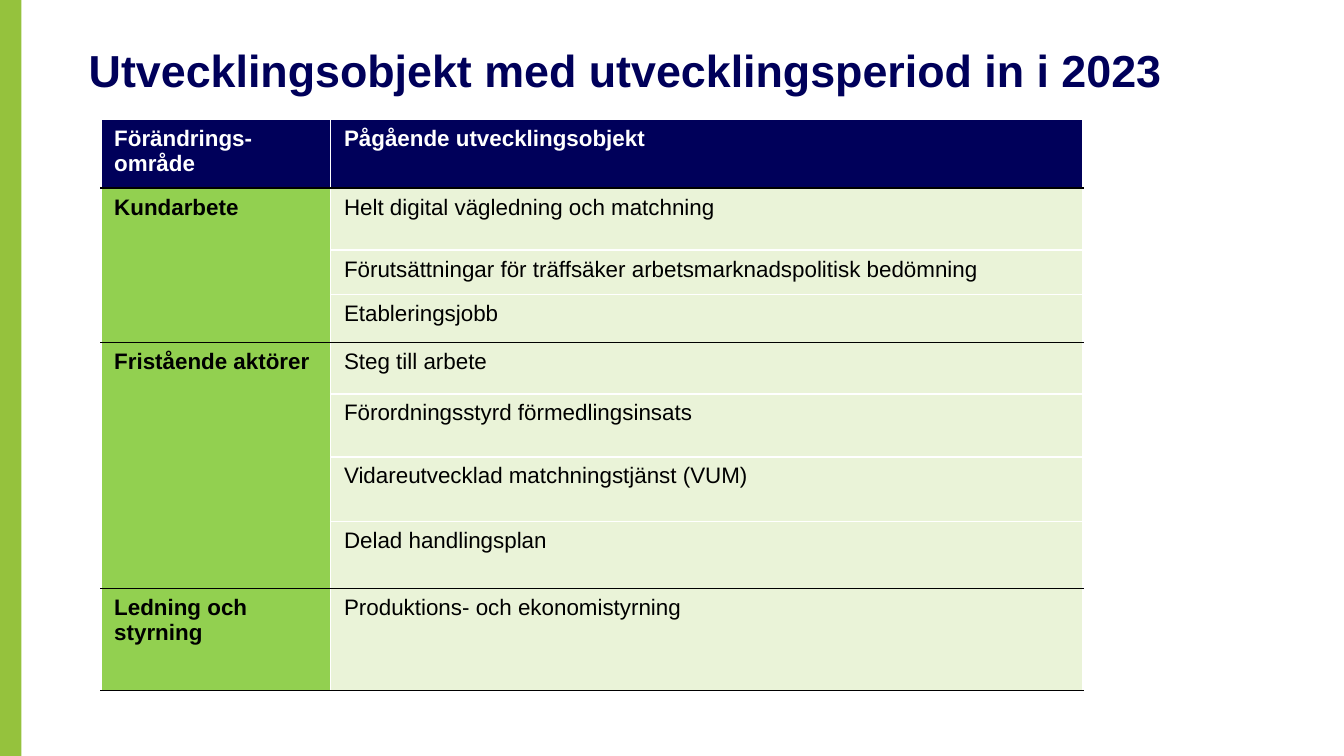
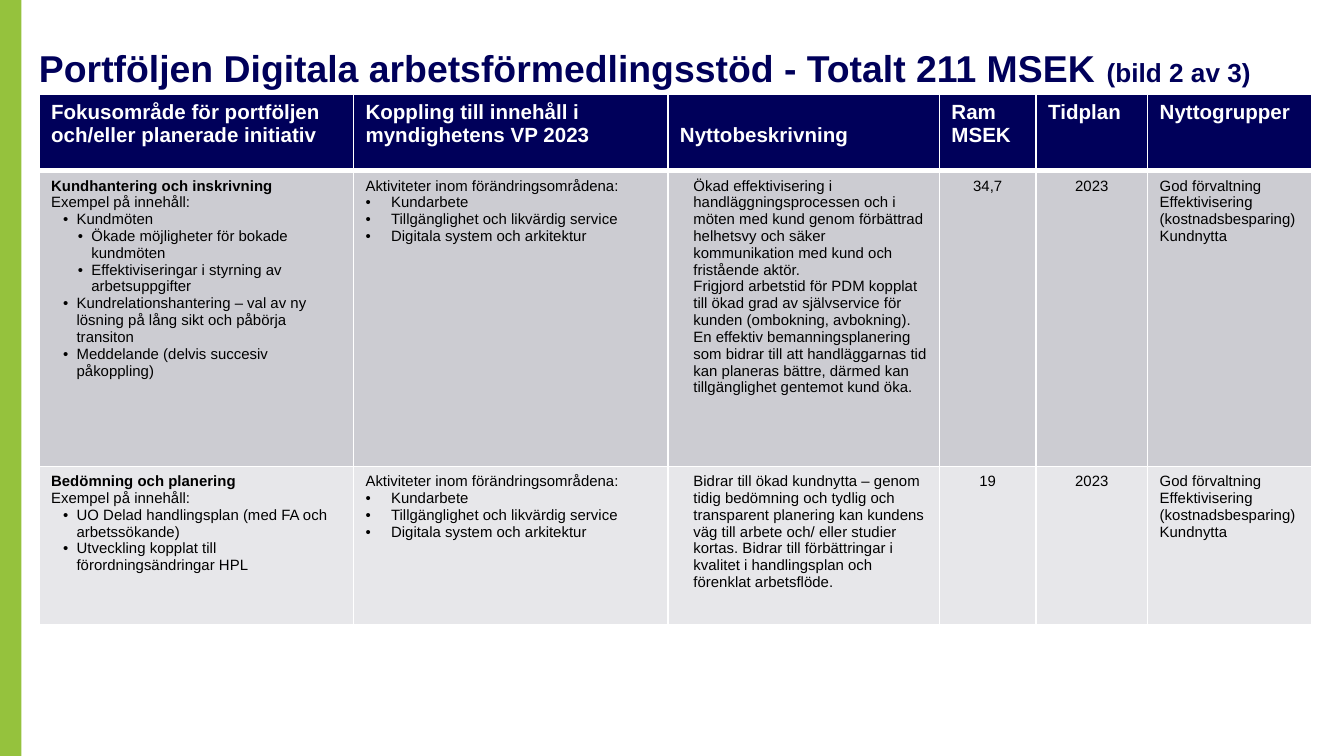
from pptx import Presentation
from pptx import util as u
from pptx.dml.color import RGBColor
from pptx.enum import text
from pptx.oxml.ns import qn
from lxml import etree

FONT = "Arial"
NAVY, LIME, WHITE, BLACK = "00005A", "95C23D", "FFFFFF", "000000"
GREEN, PALE_GREEN = "92D050", "EAF3D8"
GREYS = ["CCCCD2", "E7E7EA"]

# Paragraph styles: left indent, first-line indent, bullet, level
STYLES = {
    "plain": (0, 0, False, 0),
    "bold": (0, 0, False, 0),
    "center": (0, 0, False, 0),
    "inset": (0.1, 0, False, 0),
    "inset_after": (0.1, 0, False, 0),
    "item": (0.19, -0.1, True, 0),
    "subitem": (0.3, -0.1, True, 1),
    "wide_item": (0.19, -0.19, True, 0),
}


def rgb(value):
    return RGBColor.from_string(value)


class Deck:
    """Holds the shared style and the current slide."""

    def __init__(self):
        self.prs = Presentation()
        self.prs.slide_width = u.Inches(10)
        self.prs.slide_height = u.Inches(5.625)
        self.slide = None

    def font(self, r, size, color, bold=False):
        r.font.name = FONT
        r.font.size = u.Pt(size)
        r.font.bold = bold
        r.font.color.rgb = rgb(color)

    def new_slide(self):
        self.slide = self.prs.slides.add_slide(self.prs.slide_layouts[5])
        band = self.slide.shapes.add_shape(1, 0, 0, u.Inches(0.16), self.prs.slide_height)
        band.shadow.inherit = False
        band.fill.solid()
        band.fill.fore_color.rgb = rgb(LIME)
        band.line.fill.background()
        self.slide.shapes._spTree.insert(2, band._element)

    def title(self, box, *parts):
        sp = self.slide.shapes.title
        sp.left, sp.top, sp.width, sp.height = (u.Inches(v) for v in box)
        tf = sp.text_frame
        tf.margin_left = tf.margin_top = tf.margin_right = tf.margin_bottom = 0
        tf.vertical_anchor = text.MSO_ANCHOR.BOTTOM
        tf.auto_size = text.MSO_AUTO_SIZE.NONE
        tf.word_wrap = True
        p = tf.paragraphs[0]
        p.alignment = text.PP_ALIGN.LEFT
        for words, size in parts:
            r = p.add_run()
            r.text = words
            self.font(r, size, NAVY, True)

    def table(self, left, top, widths, heights):
        frame = self.slide.shapes.add_table(
            len(heights), len(widths), u.Inches(left), u.Inches(top),
            u.Inches(sum(widths)), u.Inches(sum(heights)))
        tbl = frame.table
        tbl.horz_banding = False
        for col, width in zip(tbl.columns, widths):
            col.width = u.Inches(width)
        for row, height in zip(tbl.rows, heights):
            row.height = u.Inches(height)
        return tbl

    def cell(self, cell, paras, size, fill, color=BLACK, top=(WHITE, 1), bottom=(WHITE, 1)):
        """Fill one cell; paras is a list of (style, text)."""
        edges = {"L": (WHITE, 1), "R": (WHITE, 1), "T": top, "B": bottom}
        tcPr = cell._tc.get_or_add_tcPr()
        for side, (line, width) in edges.items():
            ln = etree.SubElement(tcPr, qn(f"a:ln{side}"), w=str(u.Pt(width)))
            solid = etree.SubElement(ln, qn("a:solidFill"))
            etree.SubElement(solid, qn("a:srgbClr"), val=line)
        cell.fill.solid()
        cell.fill.fore_color.rgb = rgb(fill)
        tf = cell.text_frame
        tf.text = "\n".join(words for _, words in paras)
        for p, (style, _) in zip(tf.paragraphs, paras):
            self.paragraph(p, style)
            for r in p.runs:
                self.font(r, size, color, style == "bold")

    def paragraph(self, p, style):
        left, first, bullet, level = STYLES[style]
        pPr = p._p.get_or_add_pPr()
        pPr.set("marL", str(u.Inches(left)))
        pPr.set("indent", str(u.Inches(first)))
        if bullet:
            etree.SubElement(pPr, qn("a:buFont"), typeface=FONT)
            etree.SubElement(pPr, qn("a:buChar"), char="•")
        p.level = level
        if style == "center":
            p.alignment = text.PP_ALIGN.CENTER
        if style == "inset_after":
            p.space_after = u.Pt(6)


def development_slide(deck):
    areas = [
        ("Kundarbete", ["Helt digital vägledning och matchning",
                        "Förutsättningar för träffsäker arbetsmarknadspolitisk bedömning",
                        "Etableringsjobb"]),
        ("Fristående aktörer", ["Steg till arbete",
                                "Förordningsstyrd förmedlingsinsats",
                                "Vidareutvecklad matchningstjänst (VUM)",
                                "Delad handlingsplan"]),
        ("Ledning och styrning", ["Produktions- och ekonomistyrning"]),
    ]
    deck.new_slide()
    deck.title((0.66, -0.02, 8.12, 0.74),
               ("Utvecklingsobjekt med utvecklingsperiod in i 2023", 24))
    tbl = deck.table(0.75, 0.89, [1.71, 5.6],
                     [0.51, 0.46, 0.33, 0.36, 0.38, 0.47, 0.48, 0.5, 0.76])
    rule = (BLACK, 1)

    # Header
    for col, name in enumerate(["Förändrings- område", "Pågående utvecklingsobjekt"]):
        deck.cell(tbl.cell(0, col), [("bold", name)], 12, NAVY, WHITE, bottom=rule)

    # One merged area cell beside its objects, ruled off in black
    row = 1
    for area, objects in areas:
        last = row + len(objects) - 1
        for i, name in enumerate(objects, row):
            edges = {"top": rule if i == row else (WHITE, 1),
                     "bottom": rule if i == last else (WHITE, 1)}
            label = [("bold", area)] if i == row else []
            deck.cell(tbl.cell(i, 0), label, 12, GREEN, top=rule, bottom=rule)
            deck.cell(tbl.cell(i, 1), [("plain", name)], 12, PALE_GREEN, **edges)
        if last > row:
            tbl.cell(row, 0).merge(tbl.cell(last, 0))
        row = last + 1


def portfolio_slide(deck):
    headers = ["Fokusområde för portföljen och/eller planerade initiativ",
               "Koppling till innehåll i myndighetens VP 2023",
               "Nyttobeskrivning", "Ram MSEK", "Tidplan", "Nyttogrupper"]
    activities = [("plain", "Aktiviteter inom förändringsområdena:"),
                  ("wide_item", "Kundarbete"),
                  ("wide_item", "Tillgänglighet och likvärdig service"),
                  ("wide_item", "Digitala system och arkitektur")]
    groups = [("plain", "God förvaltning"),
              ("plain", "Effektivisering (kostnadsbesparing)"),
              ("plain", "Kundnytta")]
    example = ("plain", "Exempel på innehåll:")
    # Focus area, benefits, budget
    initiatives = [
        ([("bold", "Kundhantering och inskrivning"), example,
          ("item", "Kundmöten"),
          ("subitem", "Ökade möjligheter för bokade kundmöten"),
          ("subitem", "Effektiviseringar i styrning av arbetsuppgifter"),
          ("item", "Kundrelationshantering – val av ny lösning på lång sikt "
                   "och påbörja transiton"),
          ("item", "Meddelande (delvis succesiv påkoppling)")],
         [("inset", "Ökad effektivisering i handläggningsprocessen och i möten med kund "
                    "genom förbättrad helhetsvy och säker kommunikation med kund och "
                    "fristående aktör."),
          ("inset", "Frigjord arbetstid för PDM kopplat till ökad grad av självservice "
                    "för kunden (ombokning, avbokning)."),
          ("inset", "En effektiv bemanningsplanering som bidrar till att handläggarnas "
                    "tid kan planeras bättre, därmed kan tillgänglighet gentemot kund öka.")],
         "34,7"),
        ([("bold", "Bedömning och planering"), example,
          ("item", "UO Delad handlingsplan (med FA och arbetssökande)"),
          ("item", "Utveckling kopplat till förordningsändringar HPL")],
         [("inset_after", "Bidrar till ökad kundnytta – genom tidig bedömning och tydlig och "
                          "transparent planering kan kundens väg till arbete och/ eller "
                          "studier kortas. Bidrar till förbättringar i kvalitet i "
                          "handlingsplan och förenklat arbetsflöde.")],
         "19"),
    ]
    deck.new_slide()
    deck.title((0.29, 0.2, 9.63, 0.47),
               ("Portföljen Digitala arbetsförmedlingsstöd - Totalt 211 MSEK ", 20),
               ("(bild 2 av 3)", 14))
    tbl = deck.table(0.29, 0.7, [2.34, 2.34, 2.02, 0.72, 0.83, 1.22], [0.57, 2.2, 1.18])
    for cell in tbl.iter_cells():
        cell.margin_left = cell.margin_right = u.Inches(0.09)

    # Header, with the benefit heading on the second line
    thick = (WHITE, 3)
    for col, name in enumerate(headers):
        deck.cell(tbl.cell(0, col), [("bold", name)], 11, NAVY, WHITE, bottom=thick)
    tbl.cell(0, 2).margin_top = u.Inches(0.22)

    # Initiatives
    for row, (focus, benefits, budget) in enumerate(initiatives, 1):
        columns = [focus, activities, benefits,
                   [("center", budget)], [("center", "2023")], groups]
        for col, paras in enumerate(columns):
            deck.cell(tbl.cell(row, col), paras, 8, GREYS[row - 1],
                      top=thick if row == 1 else (WHITE, 1))


def main():
    deck = Deck()
    development_slide(deck)
    portfolio_slide(deck)
    deck.prs.save("out.pptx")


if __name__ == "__main__":
    main()
